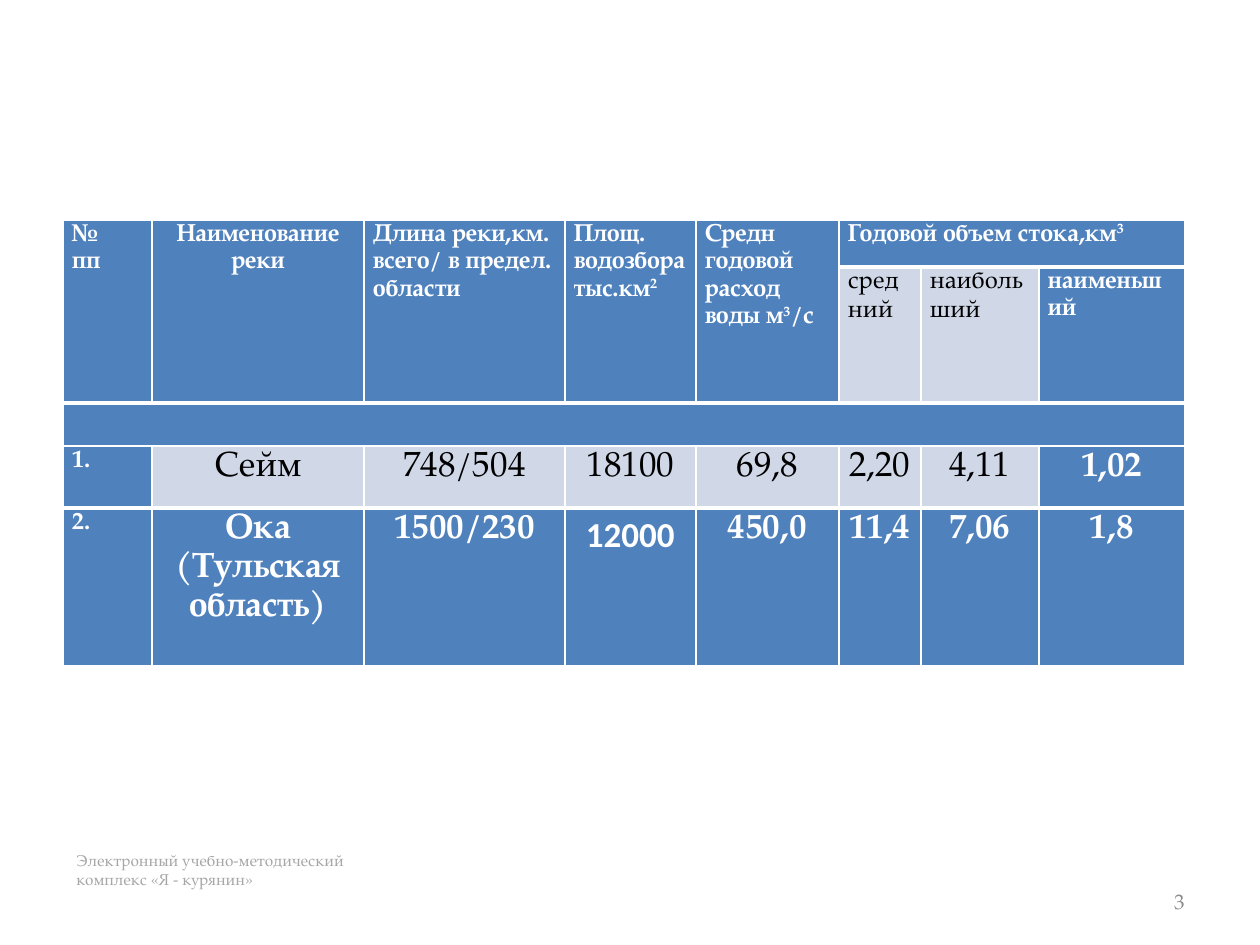
from lxml.etree import SubElement
from pptx import Presentation
from pptx.dml.color import RGBColor as Rgb
from pptx.enum.text import MSO_ANCHOR as Anchor, MSO_AUTO_SIZE as AutoSize, PP_ALIGN as Align
from pptx.oxml.ns import qn
from pptx.util import Emu, Pt

EMU_PER_PX = 914400 // 126
COLORS = {"blue": "4F81BD", "pale": "D0D8E8", "white": "FFFFFF",
          "black": "000000", "footer": "A6A6A6", "number": "8C8C8C"}
SERIF, SANS = "TeX Gyre Pagella", "Calibri"
COLUMNS = [89, 212, 201, 131, 143, 82, 118, 146]
ROWS = [47, 136, 43, 62, 158]
HEADERS = ["№\nпп", "Наименование реки", "Длина реки,км. всего/ в предел. области",
           "Площ. водозбора\nтыс.км^2", "Средн\nгодовой расход воды м^3^/с",
           "Годовой объем стока,км^3"]
FLOW_HEADERS = ["сред\nний", "наибольший", "наименьший"]
RIVERS = [["1.", "Сейм", "748/504", "18100", "69,8", "2,20", "4,11", "1,02"],
          ["2.", "Ока (Тульская область)", "1500/230", "12000", "450,0", "11,4", "7,06", "1,8"]]


def px(length):
    return Emu(length * EMU_PER_PX)


class RiverSlide:
    """Holds the text style and the slide, and adds each kind of element."""

    def __init__(self, slide):
        self.slide = slide

    def style(self, paragraph, size, color, bold=False, align=Align.LEFT, font=SERIF):
        paragraph.alignment = align
        paragraph.font.size = Pt(size)
        paragraph.font.name = font
        paragraph.font.bold = bold
        paragraph.font.color.rgb = Rgb.from_string(COLORS[color])

    def label(self, text, left, top, width, height, size, color, **look):
        frame = self.slide.shapes.add_textbox(px(left), px(top), px(width), px(height)).text_frame
        frame.word_wrap = True
        frame.text = text
        self.style(frame.paragraphs[0], size, color, **look)
        return frame

    def table(self, left, top, columns, rows):
        grid = self.slide.shapes.add_table(len(rows), len(columns), px(left), px(top),
                                           px(sum(columns)), px(sum(rows))).table
        grid.first_row = grid.horz_banding = False
        for column, width in zip(grid.columns, columns):
            column.width = px(width)
        for row, height in zip(grid.rows, rows):
            row.height = px(height)
        return grid

    def borders(self, cell, **widths):
        for side in "LRTB":
            line = SubElement(cell._tc.get_or_add_tcPr(), qn(f"a:ln{side}"),
                              w=str(Pt(widths.get(side, 1))))
            fill = SubElement(line, qn("a:solidFill"))
            SubElement(fill, qn("a:srgbClr"), val=COLORS["white"])

    def cell(self, cell, text="", pale=False, size=14, align=Align.LEFT, font=SERIF, **widths):
        cell.margin_left = cell.margin_right = px(9)
        cell.margin_top = cell.margin_bottom = 0
        self.borders(cell, **widths)
        cell.fill.solid()
        cell.fill.fore_color.rgb = Rgb.from_string(COLORS["pale" if pale else "blue"])
        for index, line in enumerate(text.split("\n")):
            paragraph = cell.text_frame.paragraphs[0] if index == 0 else cell.text_frame.add_paragraph()
            paragraph.line_spacing = 1.15
            self.style(paragraph, size, "black" if pale else "white", not pale, align, font)
            for part, words in enumerate(line.split("^")):
                if words:
                    run = paragraph.add_run()
                    run.text = words
                    if part % 2:
                        run._r.get_or_add_rPr().set("baseline", "30000")


def main():
    deck = Presentation()
    deck.slide_width, deck.slide_height = px(1260), px(945)
    page = RiverSlide(deck.slides.add_slide(deck.slide_layouts[6]))
    footer = page.label("Электронный учебно-методический\vкомплекс «Я - курянин»",
                        64, 845, 630, 50, 9, "footer")
    footer.auto_size = AutoSize.SHAPE_TO_FIT_TEXT
    number = page.label("3", 903, 876, 294, 50, 12, "number", align=Align.RIGHT)
    number.vertical_anchor = Anchor.MIDDLE

    rivers = page.table(63, 220, COLUMNS, ROWS)
    last = len(COLUMNS) - 1
    first_flow = len(HEADERS) - 1
    for column in range(first_flow):
        rivers.cell(0, column).merge(rivers.cell(1, column))
    rivers.cell(0, first_flow).merge(rivers.cell(0, last))
    rivers.cell(2, 0).merge(rivers.cell(2, last))

    for column in range(len(COLUMNS)):
        header = HEADERS[column] if column <= first_flow else ""
        page.cell(rivers.cell(0, column), header, B=3,
                  align=Align.CENTER if column == 1 else Align.LEFT)
        flow = FLOW_HEADERS[column - first_flow] if column >= first_flow else ""
        page.cell(rivers.cell(1, column), flow, pale=first_flow <= column < last, T=3, B=3)
        page.cell(rivers.cell(2, column), T=3)
        for index, river in enumerate(RIVERS):
            page.cell(rivers.cell(3 + index, column), river[column],
                      pale=index == 0 and 0 < column < last,
                      size=20 if column else 14,
                      align=Align.CENTER if column else Align.LEFT,
                      font=SANS if river[column] == "12000" else SERIF,
                      **({"T": 3} if index else {"B": 3}))
    deck.save("out.pptx")


if __name__ == "__main__":
    main()
